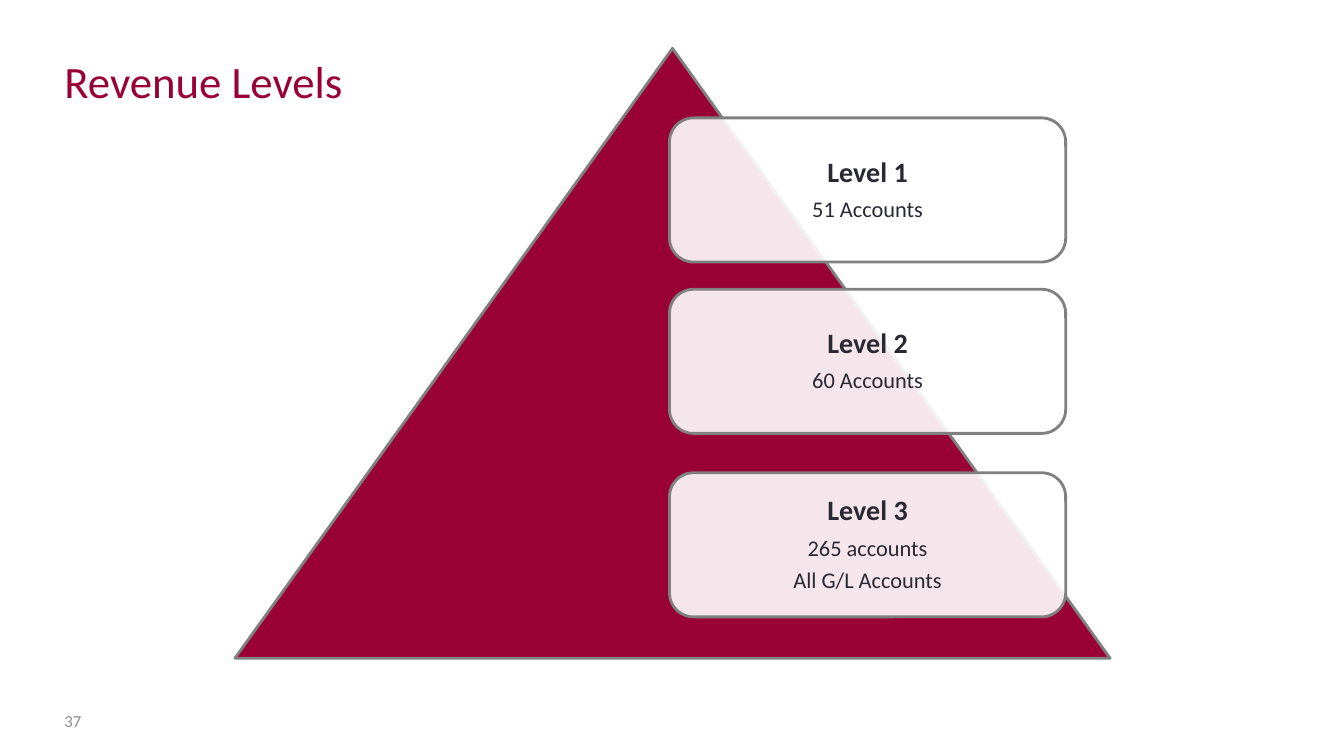
from lxml import etree
from pptx import Presentation
from pptx.dml.color import RGBColor
from pptx.enum.shapes import MSO_SHAPE as Shape
from pptx.enum.text import MSO_ANCHOR as Anchor, PP_ALIGN as Align
from pptx.oxml.ns import qn
from pptx.util import Inches, Pt

# Content
TITLE = "Revenue Levels"
NUMBER = "37"
LEVELS = [  # top, heading, details
    (1.17, "Level 1", ["51 Accounts"]),
    (2.87, "Level 2", ["60 Accounts"]),
    (4.69, "Level 3", ["265 accounts", "All G/L Accounts"]),
]
RED, GRAY, DARK, PALE, WHITE = "990033", "808080", "292934", "8E8E90", "FFFFFF"

deck = Presentation()
deck.slide_width, deck.slide_height = Inches(13.33), Inches(7.5)
slide = deck.slides.add_slide(deck.slide_layouts[6])


def color(code):
    return RGBColor.from_string(code)


def style(font, size, code, bold=False):
    font.name, font.size, font.bold = "Calibri", Pt(size), bold
    font.color.rgb = color(code)


def add_form(kind, box, fill):
    form = slide.shapes.add_shape(kind, *map(Inches, box))
    form.shadow.inherit = False
    form.fill.solid()
    form.fill.fore_color.rgb = color(fill)
    form.line.color.rgb = color(GRAY)
    form.line.width = Pt(2)
    return form


def add_label(text, box, size, code, anchor):
    frame = slide.shapes.add_textbox(*map(Inches, box)).text_frame
    frame.word_wrap = True
    frame.vertical_anchor = anchor
    frame.text = text
    style(frame.paragraphs[0].font, size, code)


# Pyramid
add_form(Shape.ISOSCELES_TRIANGLE, (2.33, 0.48, 8.68, 6.05), RED)

# Level cards, slightly see-through
for top, head, details in LEVELS:
    card = add_form(Shape.ROUNDED_RECTANGLE, (6.64, top, 3.93, 1.43), WHITE)
    tint = card.fill._xPr.find(qn("a:solidFill"))[0]
    etree.SubElement(tint, qn("a:alpha")).set("val", "90000")
    frame = card.text_frame
    frame.word_wrap = True
    frame.vertical_anchor = Anchor.MIDDLE
    frame.margin_left = frame.margin_right = Inches(0.08)
    frame.margin_top = frame.margin_bottom = Inches(0.08)
    frame.text = "\n".join([head, *details])
    for i, para in enumerate(frame.paragraphs):
        size = 16 if i else 20
        para.alignment = Align.CENTER
        para.line_spacing = 0.9
        para.space_after = Pt(size * 0.35)
        style(para.font, size, DARK, bold=i == 0)

# Page number and title
add_label(NUMBER, (0.54, 6.95, 0.56, 0.4), 12, PALE, Anchor.MIDDLE)
add_label(TITLE, (0.54, 0.48, 4.98, 0.64), 32, RED, Anchor.TOP)

deck.save("out.pptx")
